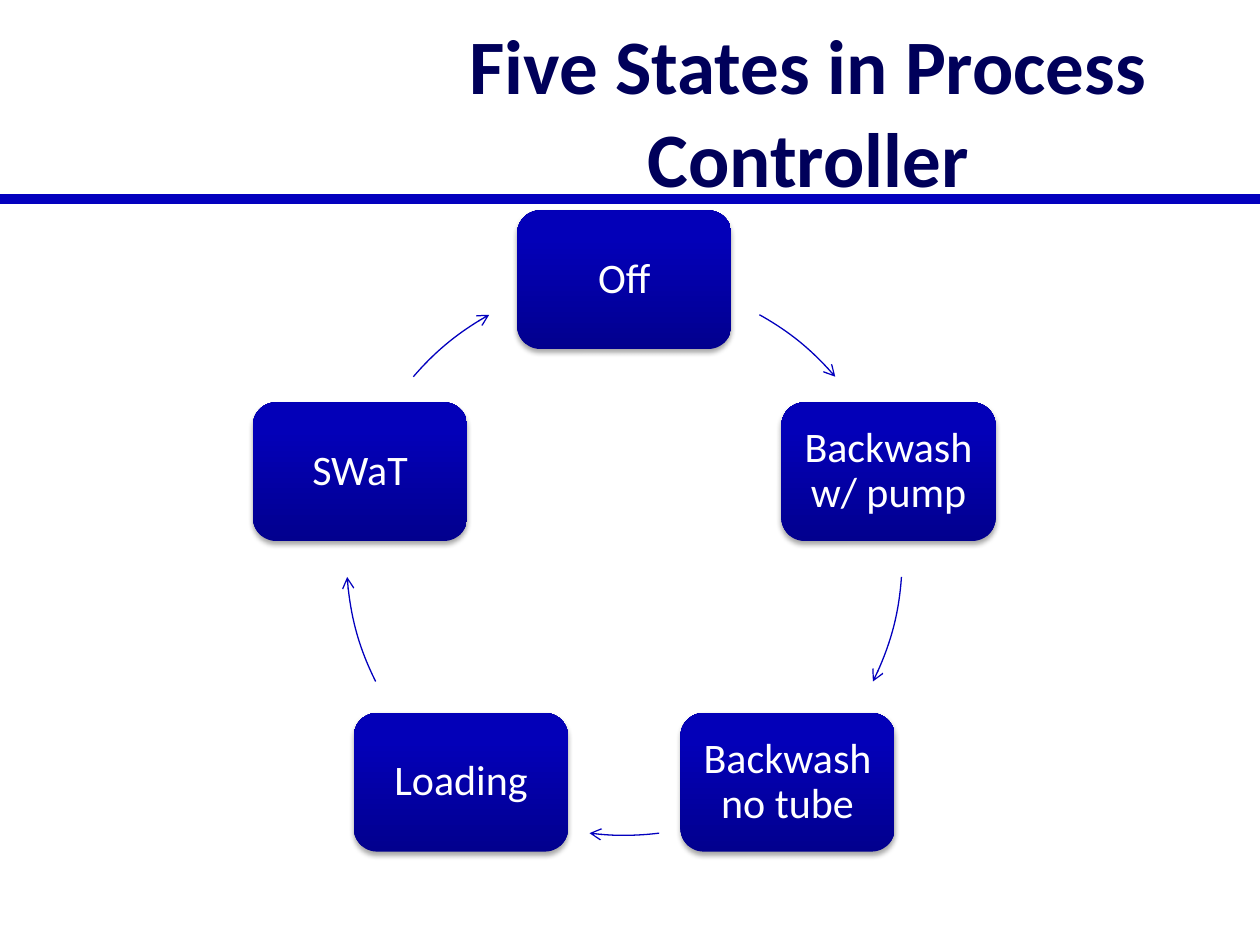
import math
from lxml import etree
from pptx import Presentation
from pptx import util as u
from pptx.dml import color
from pptx.enum import shapes, text
from pptx.oxml import ns

IN = u.Inches
BLUE = "0300BE"
STATES = ["Off", "Backwash w/ pump", "Backwash no tube", "Loading", "SWaT"]
ARCS = [(299.1, 319.4), (4, 26.5), (82.8, 97.2), (153.5, 176), (220.6, 240.9)]


def rgb(code):
    """Turn a hex string into a colour."""
    return color.RGBColor.from_string(code)


def add(node, tag, **attrs):
    """Append a drawing element with its attributes."""
    return etree.SubElement(node, ns.qn(tag), attrs)


def write(shape, words, size, code, bold=False):
    """Put one centred paragraph in a shape."""
    frame = shape.text_frame
    frame.word_wrap = True
    frame.vertical_anchor = text.MSO_ANCHOR.MIDDLE
    para = frame.paragraphs[0]
    para.text = words
    para.alignment = text.PP_ALIGN.CENTER
    font = para.font
    font.name, font.size, font.bold = "Calibri", u.Pt(size), bold
    font.color.rgb = rgb(code)
    return para


def head(slide, x, y, w, h):
    """Draw the rule across the slide and the title in its box."""
    rule = slide.shapes.add_connector(
        shapes.MSO_CONNECTOR.STRAIGHT, 0, IN(1.58), IN(10), IN(1.58))
    rule.line.color.rgb = rgb(BLUE)
    rule.line.width = u.Pt(6)
    add(rule._element.spPr, "a:effectLst")
    box = slide.shapes.add_textbox(IN(x), IN(y), IN(w), IN(h))
    write(box, "Five States in Process Controller", 44, "00005A", True)


def state(slide, words, x, y, w, h):
    """Draw one state as a shaded rounded box."""
    box = slide.shapes.add_shape(
        shapes.MSO_SHAPE.ROUNDED_RECTANGLE, IN(x), IN(y), IN(w), IN(h))
    box.fill.gradient()
    box.fill.gradient_angle = 90
    for stop, (place, code) in zip(box.fill.gradient_stops,
                                   [(0, "02008E"), (0.8, "0300B8")]):
        stop.position = place
        stop.color.rgb = rgb(code)
    box.line.fill.background()
    box.shadow.inherit = False
    effects = box._element.spPr.find(ns.qn("a:effectLst"))
    shade = add(effects, "a:outerShdw", blurRad=str(u.Pt(3.1)),
                dist=str(u.Pt(1.8)), dir="5400000", rotWithShape="0")
    add(add(shade, "a:srgbClr", val="000000"), "a:alpha", val="35000")
    frame = box.text_frame
    frame.margin_left = frame.margin_right = IN(0.1)
    frame.margin_top = frame.margin_bottom = IN(0.1)
    write(box, words, 24, "FFFFFF").line_spacing = 0.9


def arrow(slide, start, end, x, y, size):
    """Draw an arc with an arrowhead between two angles in degrees."""
    arc = slide.shapes.add_shape(
        shapes.MSO_SHAPE.ARC, IN(x), IN(y), IN(size), IN(size))
    arc.adjustments[0] = start * 0.6
    arc.adjustments[1] = end * 0.6
    arc.fill.background()
    arc.shadow.inherit = False
    arc.line.color.rgb = rgb(BLUE)
    arc.line.width = u.Pt(0.75)
    add(arc.line._get_or_add_ln(), "a:tailEnd", type="arrow")


def cycle(slide, x, y, size):
    """Set the states evenly round a circle and link them by arcs."""
    w, h, r = 1.7, 1.1, size / 2
    for i, (words, (start, end)) in enumerate(zip(STATES, ARCS)):
        turn = math.radians(360 / len(STATES) * i - 90)
        state(slide, words, x + r + r * math.cos(turn) - w / 2,
              y + r + r * math.sin(turn) - h / 2, w, h)
        arrow(slide, start, end, x, y, size)


def main():
    """Build and save the slide."""
    deck = Presentation()
    deck.slide_width, deck.slide_height = IN(10), IN(7.5)
    slide = deck.slides.add_slide(deck.slide_layouts[6])
    head(slide, 3.08, 0.25, 6.67, 1.25)
    cycle(slide, 2.75, 2.22, 4.41)
    deck.save("out.pptx")


if __name__ == "__main__":
    main()
